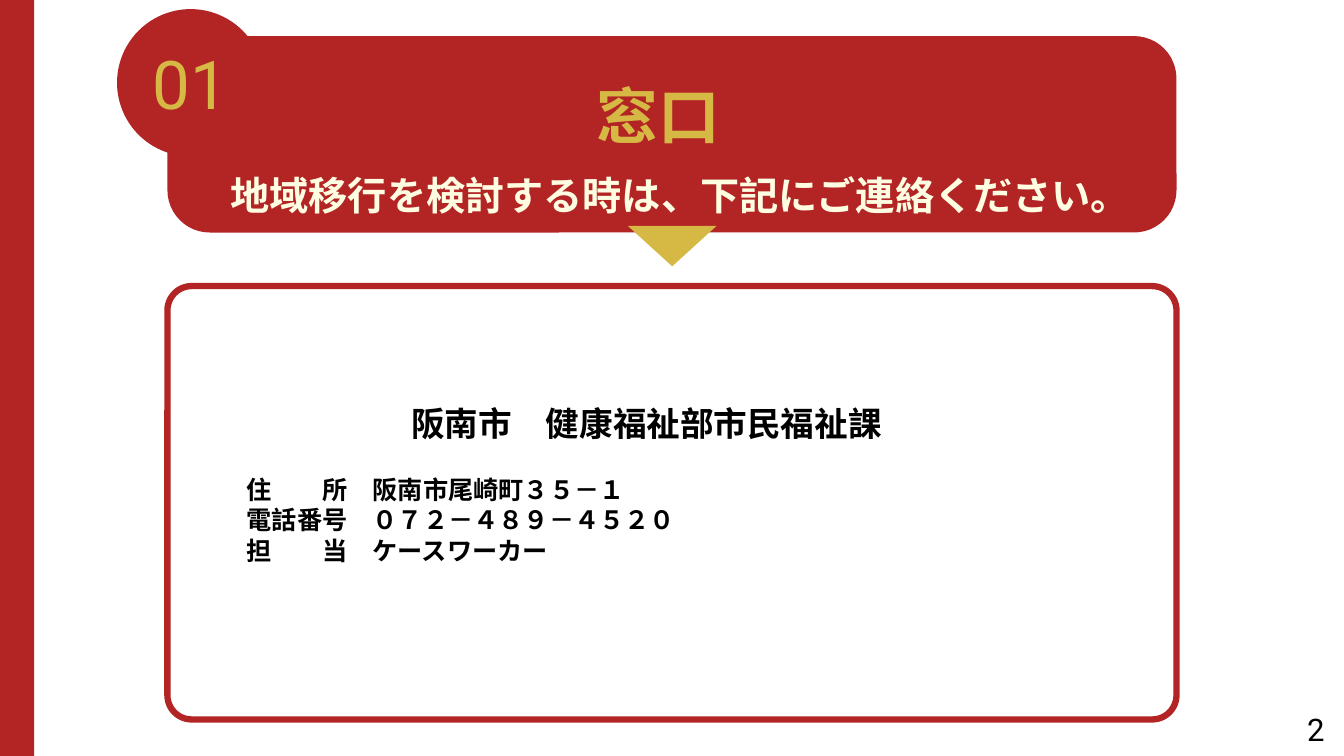
from lxml.etree import SubElement
from pptx import Presentation
from pptx.dml.color import RGBColor
from pptx.enum.shapes import MSO_SHAPE
from pptx.enum.text import MSO_ANCHOR, PP_ALIGN
from pptx.oxml.ns import qn
from pptx.util import Cm, Pt

RED = RGBColor(0xB3, 0x24, 0x25)
GOLD = RGBColor(0xD6, 0xB8, 0x45)
CREAM = RGBColor(0xFF, 0xFD, 0xE1)
WHITE = RGBColor(0xFF, 0xFF, 0xFF)
BLACK = RGBColor(0, 0, 0)
ROBOTO, NOTO, CALIBRI = "Roboto", "Noto Sans CJK JP", "Calibri"


class SlideBuilder:
    def __init__(self, slide):
        self.slide = slide

    def shape(self, kind, box, fill, line=None, radius=None):
        s = self.slide.shapes.add_shape(kind, *map(Cm, box))
        s.shadow.inherit = False
        s.fill.solid()
        s.fill.fore_color.rgb = fill
        if line is None:
            s.line.fill.background()
        else:
            s.line.color.rgb = line
            s.line.width = Pt(4.5)
        if radius is not None:
            s.adjustments[0] = radius
        return s

    def text_frame(self, box):
        tf = self.slide.shapes.add_textbox(*map(Cm, box)).text_frame
        tf.word_wrap = True
        return tf

    def run(self, p, text, size, font, color, bold=False, align=None):
        p.alignment = align
        r = p.add_run()
        r.text = text
        r.font.size = Pt(size)
        r.font.bold = bold
        r.font.color.rgb = color
        r.font.name = font
        # East Asian glyphs use the same typeface
        SubElement(r.font._element, qn("a:ea")).set("typeface", font)

    def label(self, box, *style, **options):
        self.run(self.text_frame(box).paragraphs[0], *style, **options)

    def contact(self, box, heading, rows):
        tf = self.text_frame(box)
        p = tf.paragraphs[0]
        p.line_spacing = 1.5
        p._p.get_or_add_pPr().set("marR", str(Pt(36)))
        self.run(p, heading, 24, CALIBRI, BLACK, True, PP_ALIGN.CENTER)
        for i, row in enumerate(rows):
            p = tf.add_paragraph()
            p._p.get_or_add_pPr().set("marL", str(Pt(36)))
            p.space_before = Pt(0 if i else 22)
            self.run(p, row, 18, CALIBRI, BLACK, True, PP_ALIGN.LEFT)


def main():
    prs = Presentation()
    prs.slide_width, prs.slide_height = Cm(33.87), Cm(19.05)
    b = SlideBuilder(prs.slides.add_slide(prs.slide_layouts[6]))

    # Page number
    b.label((25.73, 17.78, 7.9, 1.02), "2", 22.2, ROBOTO, BLACK,
            align=PP_ALIGN.RIGHT)

    # Banner and title
    b.shape(MSO_SHAPE.ROUNDED_RECTANGLE, (4.22, 0.91, 25.43, 4.95), RED,
            radius=0.216)
    b.label((8.33, 1.83, 16.51, 2.49), "窓口", 44, NOTO, GOLD, bold=True,
            align=PP_ALIGN.CENTER)

    # Contact card with pointer
    b.shape(MSO_SHAPE.ROUNDED_RECTANGLE, (4.22, 7.21, 25.43, 10.92), WHITE,
            line=RED, radius=0.056)
    pointer = b.shape(MSO_SHAPE.ISOSCELES_TRIANGLE, (15.82, 5.69, 2.24, 1.02),
                      GOLD)
    pointer.rotation = 180
    b.contact((4.7, 9.53, 24.46, 5.64), "阪南市　健康福祉部市民福祉課", [
        "住　　所　阪南市尾崎町３５－１",
        "電話番号　０７２－４８９－４５２０",
        "担　　当　ケースワーカー",
    ])

    # Section number
    circle = b.shape(MSO_SHAPE.OVAL, (2.95, 0.23, 3.71, 3.71), RED)
    tf = circle.text_frame
    tf.vertical_anchor = MSO_ANCHOR.MIDDLE
    b.run(tf.paragraphs[0], "01", 48, ROBOTO, GOLD, align=PP_ALIGN.CENTER)

    # Banner message
    b.label((5.56, 4.19, 23.19, 1.45),
            "地域移行を検討する時は、下記にご連絡ください。",
            28, ROBOTO, CREAM, bold=True)

    # Left edge bar
    b.shape(MSO_SHAPE.RECTANGLE, (0, 0, 0.86, 19.05), RED)

    prs.save("out.pptx")


if __name__ == "__main__":
    main()
